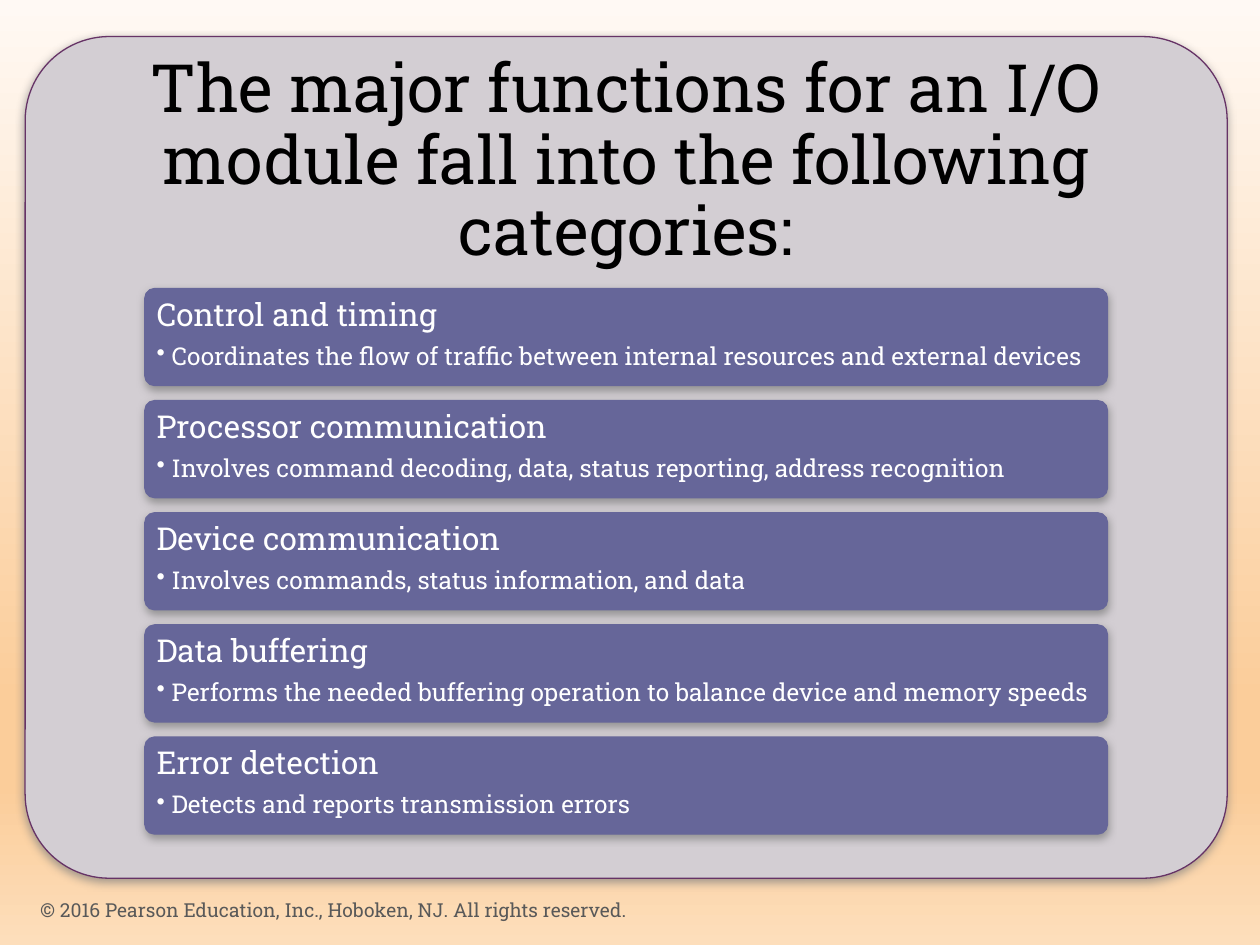
from pptx import Presentation
from pptx import util as u
from pptx.dml.color import RGBColor
from pptx.enum import shapes, text
from pptx.oxml import parse_xml
from pptx.oxml.ns import nsdecls, qn

# Content
TITLE = "The major functions for an I/O module fall into the following categories:"
FUNCTIONS = [
    ("Control and timing",
     "Coordinates the flow of traffic between internal resources and external devices"),
    ("Processor communication",
     "Involves command decoding, data, status reporting, address recognition"),
    ("Device communication", "Involves commands, status information, and data"),
    ("Data buffering",
     "Performs the needed buffering operation to balance device and memory speeds"),
    ("Error detection", "Detects and reports transmission errors"),
]
COPYRIGHT = "© 2016 Pearson Education, Inc., Hoboken, NJ. All rights reserved."

# Look
COLORS = {"panel": "D3CED3", "panel_line": "663366", "card": "666699",
          "shadow": "808080", "title": "000000", "card_text": "FFFFFF",
          "footer": "595959"}
BACKGROUND = [(0, "FFF9F4"), (74, "FBCD9A"), (83, "FBCD9A"), (100, "FDDEBB")]
FONT = "Roboto Slab"

# Layout in inches: left, top, width, height
PANEL = (0.2, 0.29, 9.54, 6.68)
TITLE_AREA = (0.2, 0.29, 9.54, 2)
FOOTER = (0.22, 7.02, 6.7, 0.4)
CARD_LEFT, CARD_TOP, CARD_WIDTH, CARD_HEIGHT = 1.15, 2.29, 7.64, 0.77
CARD_PITCH = 0.89


def color(name):
    return RGBColor.from_string(COLORS[name])


def place(shape, area):
    for name, value in zip(("left", "top", "width", "height"), area):
        setattr(shape, name, u.Inches(value))


def add_panel(slide, area, fill, line):
    panel = slide.shapes.add_shape(shapes.MSO_SHAPE.ROUNDED_RECTANGLE,
                                   *map(u.Inches, area))
    panel.adjustments[0] = 0.1
    panel.fill.solid()
    panel.fill.fore_color.rgb = color(fill)
    panel.line.color.rgb = color(line)
    panel.line.width = u.Pt(0.75)
    panel.shadow.inherit = False
    panel.element.spPr.find(qn("a:effectLst")).append(parse_xml(
        f'<a:outerShdw {nsdecls("a")} blurRad="{u.Pt(5)}" dist="{u.Pt(2)}" '
        f'dir="5400000" rotWithShape="0"><a:srgbClr val="{COLORS["shadow"]}">'
        '<a:alpha val="75000"/></a:srgbClr></a:outerShdw>'))
    return panel


def format_frame(frame, anchor, side, top):
    settings = {"word_wrap": True, "auto_size": text.MSO_AUTO_SIZE.NONE,
                "vertical_anchor": anchor,
                "margin_left": u.Inches(side), "margin_right": u.Inches(side),
                "margin_top": u.Inches(top), "margin_bottom": u.Inches(top)}
    for name, value in settings.items():
        setattr(frame, name, value)


def write(para, words, size, tint, align=text.PP_ALIGN.LEFT, **spacing):
    for name, value in {"alignment": align, "space_before": u.Pt(0), **spacing}.items():
        setattr(para, name, value)
    span = para.add_run()
    span.text = words
    for name, value in {"name": FONT, "size": u.Pt(size)}.items():
        setattr(span.font, name, value)
    span.font.color.rgb = color(tint)


def add_bullet(para):
    props = para._p.get_or_add_pPr()
    props.set("marL", str(u.Inches(0.12)))
    props.set("indent", str(-u.Inches(0.12)))
    props.append(parse_xml(f'<a:buChar {nsdecls("a")} char="•"/>'))


def main():
    deck = Presentation()
    deck.slide_width, deck.slide_height = u.Inches(10), u.Inches(7.5)
    slide = deck.slides.add_slide(deck.slide_layouts[5])

    # Background gradient
    fill = slide.background.fill
    fill.gradient()
    fill.gradient_angle = 270
    stops = slide.element.find(".//" + qn("a:gsLst"))
    stops.clear()
    for share, tint in BACKGROUND:
        stops.append(parse_xml(f'<a:gs {nsdecls("a")} pos="{share * 1000}">'
                               f'<a:srgbClr val="{tint}"/></a:gs>'))

    # Panel, with the title brought in front of it
    add_panel(slide, PANEL, "panel", "panel_line")
    title = slide.shapes.title
    slide.shapes.element.append(title.element)
    place(title, TITLE_AREA)
    format_frame(title.text_frame, text.MSO_ANCHOR.MIDDLE, 0.16, 0.16)
    write(title.text_frame.paragraphs[0], TITLE, 38, "title",
          text.PP_ALIGN.CENTER, line_spacing=0.9)

    # One card per function
    for row, (heading, detail) in enumerate(FUNCTIONS):
        area = (CARD_LEFT, CARD_TOP + row * CARD_PITCH, CARD_WIDTH, CARD_HEIGHT)
        frame = add_panel(slide, area, "card", "card").text_frame
        format_frame(frame, text.MSO_ANCHOR.TOP, 0.07, 0.06)
        write(frame.paragraphs[0], heading, 18, "card_text",
              line_spacing=0.9, space_after=u.Pt(6.3))
        para = frame.add_paragraph()
        add_bullet(para)
        write(para, detail, 14, "card_text", line_spacing=0.9)

    # Copyright line
    box = slide.shapes.add_textbox(*map(u.Inches, FOOTER))
    format_frame(box.text_frame, text.MSO_ANCHOR.MIDDLE, 0.1, 0.05)
    write(box.text_frame.paragraphs[0], COPYRIGHT, 11, "footer")

    deck.save("out.pptx")


if __name__ == "__main__":
    main()
